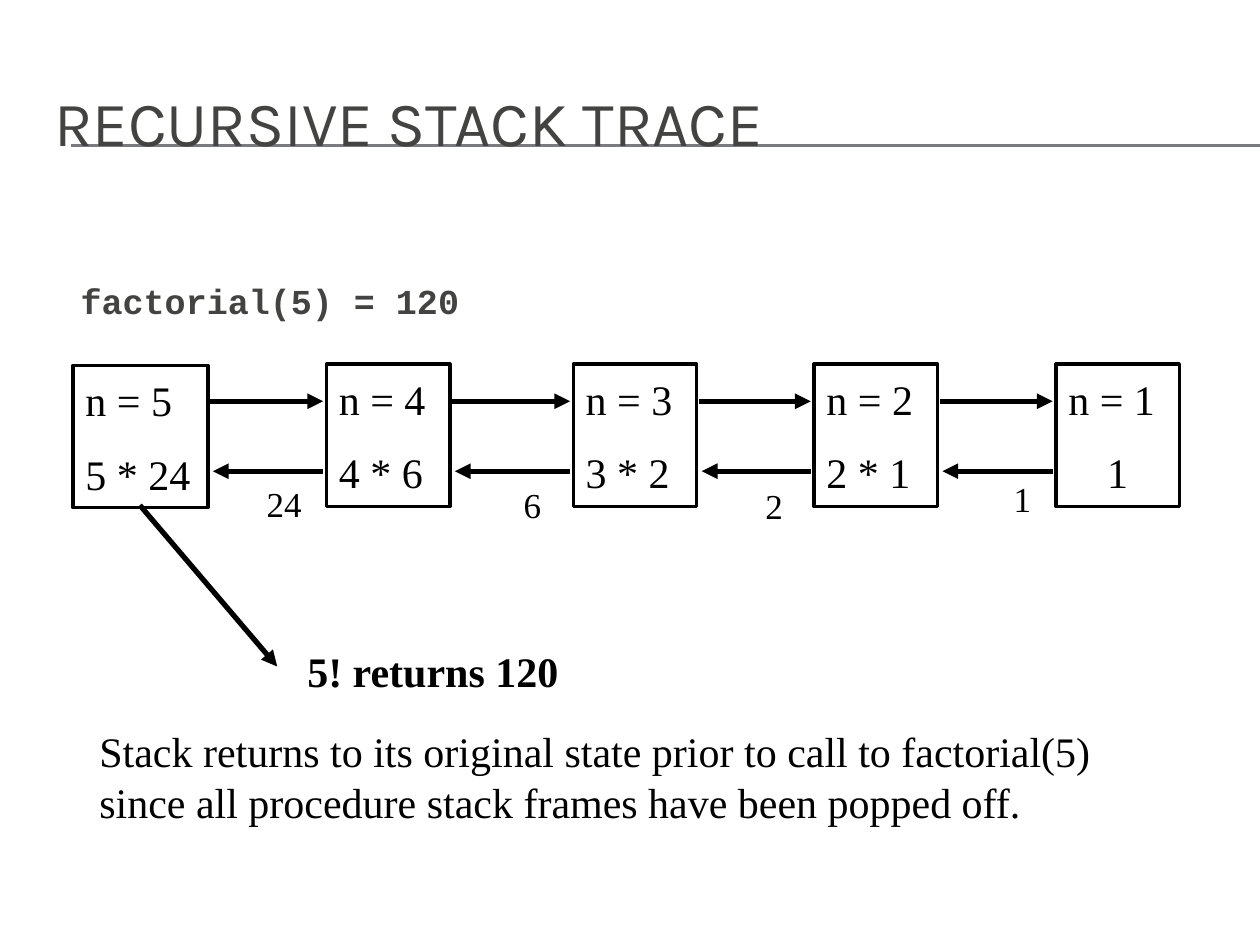
from itertools import pairwise

from lxml.etree import SubElement
from pptx import Presentation
from pptx.dml.color import RGBColor as RGB
from pptx.enum.shapes import MSO_CONNECTOR as Conn, MSO_SHAPE as Shape
from pptx.enum.text import MSO_ANCHOR as Anchor, PP_ALIGN as Align
from pptx.oxml.ns import qn
from pptx.util import Inches, Pt

COLORS = {"ink": "000000", "paper": "FFFFFF", "head": "434342", "rule": "797B7E"}
FONTS = {"head": "Karla", "code": "Courier New", "text": "Times New Roman"}
COLS, ROWS = 20, 15


class Board:
    """Draws styled elements on one slide, placed by columns and rows of a grid."""

    def __init__(self, deck):
        self.deck = deck
        self.slide = deck.slides.add_slide(deck.slide_layouts[1])
        self.shapes = self.slide.shapes

    def grid(self, *spots):
        units = self.deck.slide_width / COLS, self.deck.slide_height / ROWS
        return [round(spot * units[i % 2]) for i, spot in enumerate(spots)]

    def label(self, shape, text, size, font="text", color="ink", bold=False,
              align=Align.LEFT, anchor=Anchor.MIDDLE):
        frame = shape.text_frame
        frame.text = text
        frame.word_wrap = True
        frame.vertical_anchor = anchor
        for i, para in enumerate(frame.paragraphs):
            para.alignment = align
            para.space_before = Pt(size * 0.55 if i else 0)
            for run in para.runs:
                run.font.size = Pt(size)
                run.font.name = FONTS[font]
                run.font.bold = bold
                run.font.color.rgb = RGB.from_string(COLORS[color])
        return frame

    def holder(self, index, spot, text, size, **style):
        shape = self.slide.placeholders[index]
        shape.left, shape.top, shape.width, shape.height = self.grid(*spot)
        shape.element.getparent().append(shape.element)
        return self.label(shape, text, size, **style)

    def title(self, spot, text):
        self.holder(0, spot, text, 36, font="head", color="head")

    def code(self, spot, text):
        frame = self.holder(1, spot, text, 20, font="code", color="head",
                            bold=True, anchor=Anchor.TOP)
        para = frame.paragraphs[0]
        para.space_before = Pt(4)
        props = para._p.get_or_add_pPr()
        props.set("marL", str(Inches(0.38)))
        props.set("indent", str(-Inches(0.38)))
        SubElement(props, qn("a:buNone"))

    def box(self, spot, text):
        shape = self.shapes.add_shape(Shape.RECTANGLE, *self.grid(*spot))
        shape.shadow.inherit = False
        shape.fill.solid()
        shape.fill.fore_color.rgb = RGB.from_string(COLORS["paper"])
        shape.line.color.rgb = RGB.from_string(COLORS["ink"])
        shape.line.width = Pt(2)
        return self.label(shape, text, 24)

    def note(self, spot, text, size=24, **style):
        self.label(self.shapes.add_textbox(*self.grid(*spot)), text, size, **style)

    def line(self, spot, color="ink", width=3.0, arrow=True):
        link = self.shapes.add_connector(Conn.STRAIGHT, *self.grid(*spot))
        link.line.color.rgb = RGB.from_string(COLORS[color])
        link.line.width = Pt(width)
        if arrow:
            SubElement(link.line._get_or_add_ln(), qn("a:tailEnd"), type="triangle")
        SubElement(link.element.spPr, qn("a:effectLst"))


def main():
    deck = Presentation()
    deck.slide_width, deck.slide_height = Inches(10), Inches(7.5)
    board = Board(deck)

    for row in (2.3, 2.32):
        board.line((1.12, row, COLS, row), "rule", 0.75, arrow=False)
    board.title((0.66, 1, 19, 1.84), "RECURSIVE STACK TRACE")
    board.code((1.08, 4.34, 6.76, 1.12), "factorial(5) = 120")

    frames = [
        (1.16, 5.8, 2.14, "n = 5\n5 * 24"),
        (5.18, 5.78, 1.96, "n = 4\n4 * 6"),
        (9.1, 5.78, 1.96, "n = 3\n3 * 2"),
        (12.92, 5.78, 1.96, "n = 2\n2 * 1"),
        (16.76, 5.78, 1.96, "n = 1\n1"),
    ]
    for left, top, width, text in frames:
        last = board.box((left, top, width, 2.26), text)
    last.paragraphs[1].alignment = Align.CENTER

    for (left, _, width, _), (end, *_) in pairwise(frames):
        start = left + width
        board.line((start + 0.04, 6.37, end - 0.05, 6.37))
        board.line((end - 0.05, 7.48, start + 0.08, 7.48))

    values = [(3.98, 7.56, "24"), (7.92, 7.58, "6"), (11.76, 7.6, "2"), (15.7, 7.48, "1")]
    for left, top, text in values:
        board.note((left, top, 1.06, 0.86), text, 20, align=Align.CENTER)

    board.line((2.22, 8.02, 4.4, 10.58))
    board.note((4.68, 10.14, 4.7, 1), "5! returns 120", bold=True)
    board.note((1.38, 11.42, 16.36, 1.8),
               "Stack returns to its original state prior to call to factorial(5) "
               "since all procedure stack frames have been popped off.")
    deck.save("out.pptx")


if __name__ == "__main__":
    main()
